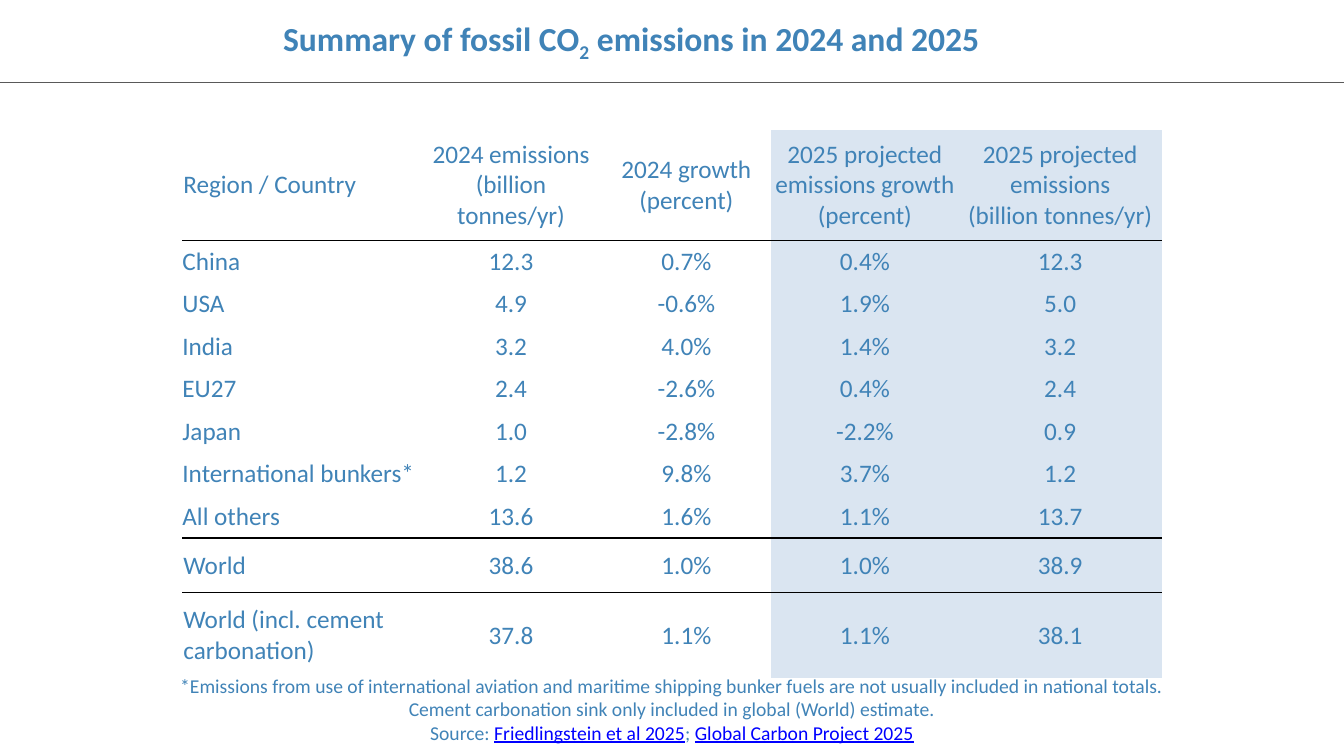
from lxml.etree import SubElement
from pptx import Presentation
from pptx.dml.color import RGBColor
from pptx.enum.shapes import MSO_CONNECTOR
from pptx.enum.text import MSO_ANCHOR as ANCHOR, MSO_AUTO_SIZE as AUTO, PP_ALIGN as ALIGN
from pptx.oxml.ns import qn
from pptx.util import Pt

WIDTH, HEIGHT = 960, 540
BLUE, SHADE, LINK, GREY, BLACK = "4083B7", "DAE5F1", "0000FF", "595959", "000000"
NO_GRID_STYLE = "{2D5ABB26-0587-4C30-8999-92F81FD0307C}"

COLUMN_WIDTHS = [170, 129.5, 121, 134, 145]
ROW_HEIGHTS = [77.2] + [30.36] * 7 + [38.4, 60]
RULED_ROWS = {0, 7, 8}  # rows with a line below them
PADDED_ROWS = {0, 8, 9}
FIRST_SHADED_COLUMN = 3

EMISSIONS = [
    ["Region / Country", "2024 emissions (billion tonnes/yr)", "2024 growth (percent)",
     "2025 projected emissions growth\v(percent)", "2025 projected emissions\v(billion tonnes/yr)"],
    ["China", "12.3", "0.7%", "0.4%", "12.3"],
    ["USA", "4.9", "-0.6%", "1.9%", "5.0"],
    ["India", "3.2", "4.0%", "1.4%", "3.2"],
    ["EU27", "2.4", "-2.6%", "0.4%", "2.4"],
    ["Japan", "1.0", "-2.8%", "-2.2%", "0.9"],
    ["International bunkers*", "1.2", "9.8%", "3.7%", "1.2"],
    ["All others", "13.6", "1.6%", "1.1%", "13.7"],
    ["World", "38.6", "1.0%", "1.0%", "38.9"],
    ["World (incl. cement carbonation)", "37.8", "1.1%", "1.1%", "38.1"],
]

FOOTNOTES = [
    "*Emissions from use of international aviation and maritime shipping bunker fuels "
    "are not usually included in national totals.",
    "Cement carbonation sink only included in global (World) estimate.",
]
SOURCES = ["Friedlingstein et al 2025", "Global Carbon Project 2025"]


def rgb(color):
    return RGBColor.from_string(color)


def style(p, size, align=ALIGN.LEFT, bold=False):
    p.alignment = align
    p.font.name, p.font.size, p.font.bold = "Calibri", Pt(size), bold
    p.font.color.rgb = rgb(BLUE)


def add_run(p, text):
    r = p.add_run()
    r.text = text
    return r


def add_title(s, left, top, width, height):
    sp = s.shapes.title
    sp.left, sp.top, sp.width, sp.height = Pt(left), Pt(top), Pt(width), Pt(height)
    tf = sp.text_frame
    tf.auto_size, tf.vertical_anchor = AUTO.NONE, ANCHOR.MIDDLE
    p = tf.paragraphs[0]
    style(p, 24, bold=True)
    add_run(p, "Summary of fossil CO")
    subscript = add_run(p, "2")
    subscript.font._element.set("baseline", "-25000")
    add_run(p, " emissions in 2024 and 2025")


def add_title_rule(s, left, top, width):
    line = s.shapes.add_connector(MSO_CONNECTOR.STRAIGHT, Pt(left), Pt(top), Pt(left + width), Pt(top))
    line.line.color.rgb, line.line.width = rgb(GREY), Pt(0.75)
    SubElement(line._element.spPr, qn("a:effectLst"))


def rule_below(cell):
    """Draw a black line along the bottom edge; call before the cell is filled."""
    ln = SubElement(cell._tc.get_or_add_tcPr(), qn("a:lnB"), w=str(Pt(1)))
    SubElement(SubElement(ln, qn("a:solidFill")), qn("a:srgbClr"), val=BLACK)


def format_cell(cell, row, column, text):
    side, end = 0, 0
    if row in PADDED_ROWS:
        side, end = 0.7, 6.5 if column else 8.6
    cell.margin_left = cell.margin_right = Pt(side)
    cell.margin_top = cell.margin_bottom = Pt(end)
    cell.vertical_anchor = ANCHOR.MIDDLE
    if row in RULED_ROWS:
        rule_below(cell)
    if column >= FIRST_SHADED_COLUMN:
        cell.fill.solid()
        cell.fill.fore_color.rgb = rgb(SHADE)
    else:
        cell.fill.background()
    p = cell.text_frame.paragraphs[0]
    p.text = text
    style(p, 18, ALIGN.CENTER if column else ALIGN.LEFT)


def add_emissions_table(s, left, top):
    frame = s.shapes.add_table(len(ROW_HEIGHTS), len(COLUMN_WIDTHS), Pt(left), Pt(top),
                               Pt(sum(COLUMN_WIDTHS)), Pt(sum(ROW_HEIGHTS)))
    table = frame.table
    table.first_row = table.horz_banding = False
    table._tbl.tblPr.find(qn("a:tableStyleId")).text = NO_GRID_STYLE
    for column, width in zip(table.columns, COLUMN_WIDTHS):
        column.width = Pt(width)
    for row, height in zip(table.rows, ROW_HEIGHTS):
        row.height = Pt(height)
    for i, values in enumerate(EMISSIONS):
        for j, text in enumerate(values):
            format_cell(table.cell(i, j), i, j, text)


def add_footnotes(s, left, top, width, height):
    tf = s.shapes.add_textbox(Pt(left), Pt(top), Pt(width), Pt(height)).text_frame
    tf.word_wrap, tf.vertical_anchor = True, ANCHOR.BOTTOM
    p = tf.paragraphs[0]
    style(p, 14, ALIGN.CENTER)
    for note in FOOTNOTES:
        add_run(p, note)
        p.add_line_break()
    for lead, source in zip(["Source: ", "; "], SOURCES):
        add_run(p, lead)
        r = add_run(p, source)
        r.font.underline = True
        r.font.color.rgb = rgb(LINK)


def main():
    prs = Presentation()
    prs.slide_width, prs.slide_height = Pt(WIDTH), Pt(HEIGHT)
    s = prs.slides.add_slide(prs.slide_layouts.get_by_name("Title Only"))
    add_title_rule(s, 0, 59, WIDTH)
    add_emissions_table(s, 130.3, 92.9)
    add_title(s, 195, 9.4, 765, 39.6)
    add_footnotes(s, 23, 464.4, 914, 70.6)
    prs.save("out.pptx")


if __name__ == "__main__":
    main()
